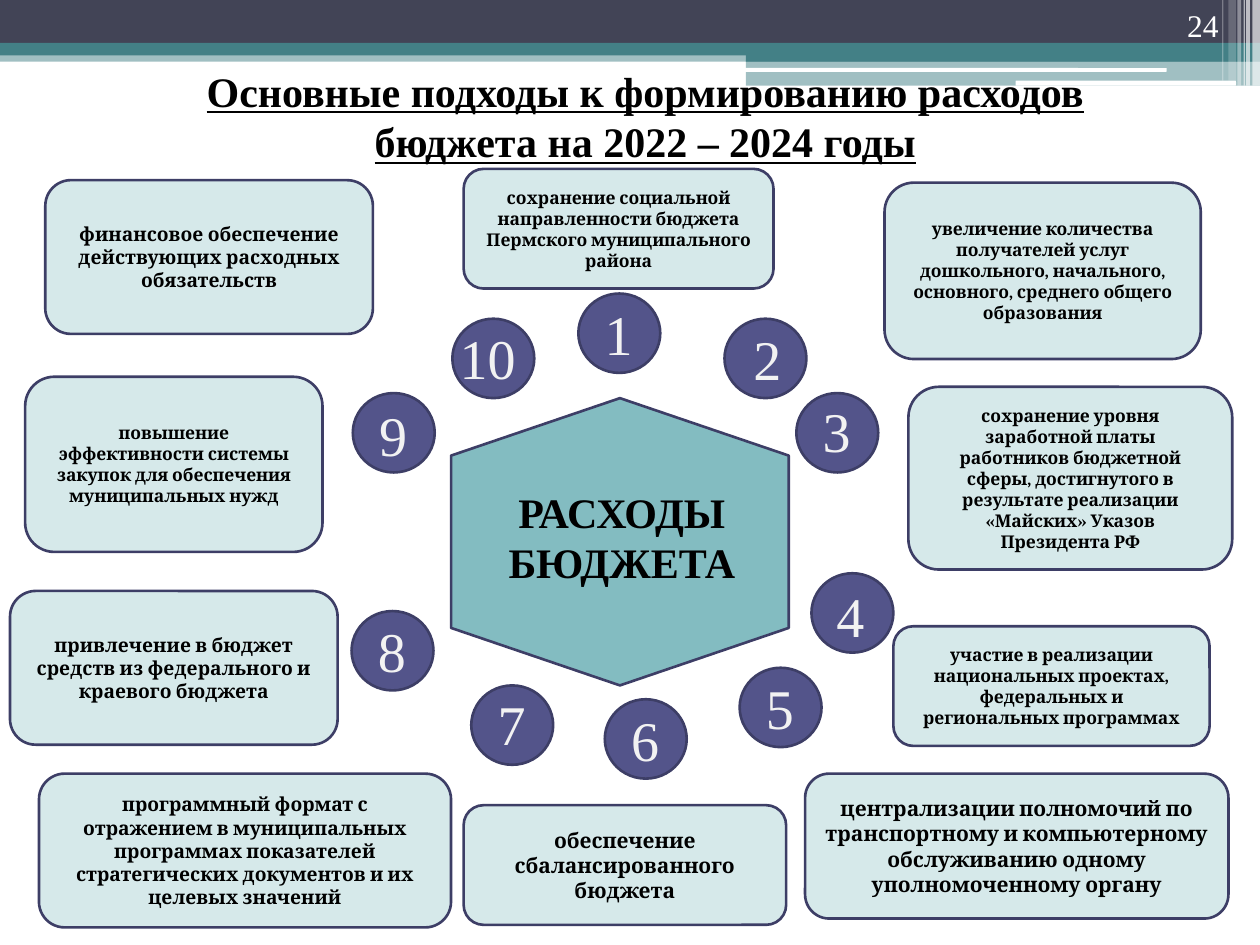
"""Build the slide on the approaches to forming budget expenditure."""
from dataclasses import dataclass
from typing import Any

from lxml.etree import SubElement
from pptx import Presentation
from pptx.dml.color import RGBColor
from pptx.enum.shapes import MSO_SHAPE
from pptx.enum.text import MSO_ANCHOR, MSO_AUTO_SIZE, PP_ALIGN
from pptx.oxml.ns import qn
from pptx.util import Emu, Pt

EMU_PER_PX = 9144
BLACK = RGBColor(0x00, 0x00, 0x00)
WHITE = RGBColor(0xFF, 0xFF, 0xFF)
PALE_GREY = RGBColor(0xF2, 0xF2, 0xF2)
SLATE = RGBColor(0x42, 0x44, 0x56)
TEAL = RGBColor(0x43, 0x80, 0x86)
LIGHT_TEAL = RGBColor(0x83, 0xBC, 0xC1)
PALE_TEAL = RGBColor(0xD6, 0xE9, 0xEA)
VIOLET = RGBColor(0x53, 0x54, 0x8A)
DARK_VIOLET = RGBColor(0x3D, 0x3E, 0x66)
SERIF = "Times New Roman"
HEADING = {"name": SERIF, "size": Pt(24), "bold": True}
TITLE = {**HEADING, "underline": True}
NUMERAL = {"name": SERIF, "size": Pt(32)}
PAGE_NUMBER = {"name": SERIF, "size": Pt(18)}


@dataclass(frozen=True)
class Area:
    left: int
    top: int
    width: int
    height: int

    def emu(self) -> list[Emu]:
        return [Emu(px * EMU_PER_PX) for px in (self.left, self.top, self.width, self.height)]


@dataclass(frozen=True)
class Band:
    area: Area
    color: RGBColor
    opacity: int = 100
    kind: MSO_SHAPE = MSO_SHAPE.RECTANGLE


@dataclass(frozen=True)
class Approach:
    area: Area
    size: int
    text: str


@dataclass(frozen=True)
class Badge:
    left: int
    top: int
    label_left: int
    label_top: int
    label_width: int = 42


BANDS = [
    Band(Area(0, 40, 1000, 9), TEAL, 50),
    Band(Area(0, 0, 1000, 34), SLATE),
    Band(Area(0, 34, 1000, 10), TEAL),
    Band(Area(592, 39, 408, 10), TEAL),
    Band(Area(592, 48, 408, 20), TEAL, 50),
    Band(Area(591, 54, 335, 3), WHITE, kind=MSO_SHAPE.ROUNDED_RECTANGLE),
    Band(Area(806, 64, 175, 4), WHITE, kind=MSO_SHAPE.ROUNDED_RECTANGLE),
    Band(Area(994, 0, 6, 68), WHITE, 65),
    Band(Area(989, 0, 3, 68), WHITE, 65),
    Band(Area(987, 0, 1, 68), WHITE, 60),
    Band(Area(982, 0, 3, 68), WHITE, 40),
    Band(Area(975, 0, 6, 64), WHITE, 20),
    Band(Area(970, 0, 1, 64), WHITE, 30),
]
APPROACHES = [
    Approach(Area(368, 134, 246, 95), 10,
             "сохранение социальной направленности бюджета Пермского муниципального района"),
    Approach(Area(702, 145, 251, 140), 10,
             "увеличение количества получателей услуг дошкольного, начального, основного, "
             "среднего общего образования"),
    Approach(Area(721, 307, 257, 145), 10,
             "сохранение уровня заработной платы работников бюджетной сферы, достигнутого "
             "в результате реализации «Майских» Указов Президента РФ"),
    Approach(Area(709, 497, 251, 95), 10,
             "участие в реализации национальных проектах, федеральных и региональных программах"),
    Approach(Area(639, 614, 336, 115), 12,
             "централизации полномочий по транспортному и компьютерному обслуживанию "
             "одному уполномоченному органу"),
    Approach(Area(368, 639, 256, 95), 12, "обеспечение сбалансированного бюджета"),
    Approach(Area(31, 614, 327, 122), 11,
             "программный формат с отражением в муниципальных программах показателей "
             "стратегических документов и их целевых значений"),
    Approach(Area(8, 469, 260, 122), 11,
             "привлечение в бюджет средств из федерального и краевого бюджета"),
    Approach(Area(20, 299, 236, 139), 10,
             "повышение эффективности системы закупок для обеспечения муниципальных нужд"),
    Approach(Area(36, 143, 260, 122), 11,
             "финансовое обеспечение действующих расходных обязательств"),
]
BADGES = [
    Badge(459, 233, 470, 233),
    Badge(575, 253, 588, 253),
    Badge(632, 312, 643, 310),
    Badge(644, 455, 654, 457),
    Badge(587, 530, 598, 530),
    Badge(480, 555, 491, 555),
    Badge(374, 544, 385, 542),
    Badge(279, 485, 290, 484),
    Badge(280, 312, 291, 313),
    Badge(359, 253, 355, 252, 83),
]


def write(box: Any, text: str, style: dict[str, Any], color: RGBColor,
          align: PP_ALIGN, anchor: MSO_ANCHOR) -> None:
    frame = box.text_frame
    layout = {"word_wrap": True, "auto_size": MSO_AUTO_SIZE.NONE, "vertical_anchor": anchor}
    for name, value in layout.items():
        setattr(frame, name, value)
    para = frame.paragraphs[0]
    para.text = text
    para.alignment = align
    for span in para.runs:
        for name, value in style.items():
            setattr(span.font, name, value)
        span.font.color.rgb = color


def draw_shape(page: Any, kind: MSO_SHAPE, area: Area, color: RGBColor) -> Any:
    shape = page.shapes.add_shape(kind, *area.emu())
    shape.shadow.inherit = False
    shape.fill.solid()
    shape.fill.fore_color.rgb = color
    shape.line.color.rgb = DARK_VIOLET
    shape.line.width = Pt(1.5)
    return shape


def draw_band(page: Any, band: Band) -> None:
    shape = draw_shape(page, band.kind, band.area, band.color)
    shape.line.fill.background()
    if band.opacity < 100:
        color = shape.element.spPr.find(qn("a:solidFill"))[0]
        SubElement(color, qn("a:alpha"), val=str(band.opacity * 1000))


def draw_text(page: Any, area: Area, text: str, style: dict[str, Any], color: RGBColor,
              align: PP_ALIGN, anchor: MSO_ANCHOR = MSO_ANCHOR.TOP) -> None:
    write(page.shapes.add_textbox(*area.emu()), text, style, color, align, anchor)


def draw_title(page: Any, area: Area, text: str) -> None:
    title = page.shapes.title
    for name, value in zip(("left", "top", "width", "height"), area.emu()):
        setattr(title, name, value)
    write(title, text, TITLE, BLACK, PP_ALIGN.CENTER, MSO_ANCHOR.MIDDLE)
    title.element.getparent().append(title.element)


def draw_approach(page: Any, approach: Approach) -> None:
    box = draw_shape(page, MSO_SHAPE.ROUNDED_RECTANGLE, approach.area, PALE_TEAL)
    style = {"name": "Cambria", "size": Pt(approach.size), "bold": True}
    write(box, approach.text, style, BLACK, PP_ALIGN.CENTER, MSO_ANCHOR.MIDDLE)


def draw_badge(page: Any, number: int, badge: Badge) -> None:
    draw_shape(page, MSO_SHAPE.OVAL, Area(badge.left, badge.top, 65, 63), VIOLET)
    label = Area(badge.label_left, badge.label_top, badge.label_width, 64)
    draw_text(page, label, str(number), NUMERAL, PALE_GREY, PP_ALIGN.LEFT)


def main() -> None:
    deck = Presentation()
    deck.slide_width, deck.slide_height = Area(0, 0, 1000, 750).emu()[2:]
    page = deck.slides.add_slide(deck.slide_layouts[5])
    for band in BANDS:
        draw_band(page, band)
    draw_title(page, Area(120, 20, 784, 144),
               "Основные подходы к формированию расходов бюджета на 2022 – 2024 годы")
    draw_text(page, Area(894, 0, 83, 40), "24", PAGE_NUMBER, WHITE,
              PP_ALIGN.RIGHT, MSO_ANCHOR.BOTTOM)
    hexagon = draw_shape(page, MSO_SHAPE.FLOWCHART_PREPARATION,
                         Area(378, 296, 228, 268), LIGHT_TEAL)
    hexagon.rotation = 90
    draw_text(page, Area(393, 381, 201, 91), "РАСХОДЫ\vБЮДЖЕТА", HEADING, BLACK, PP_ALIGN.CENTER)
    for approach in APPROACHES:
        draw_approach(page, approach)
    for number, badge in enumerate(BADGES, start=1):
        draw_badge(page, number, badge)
    deck.save("out.pptx")


if __name__ == "__main__":
    main()
